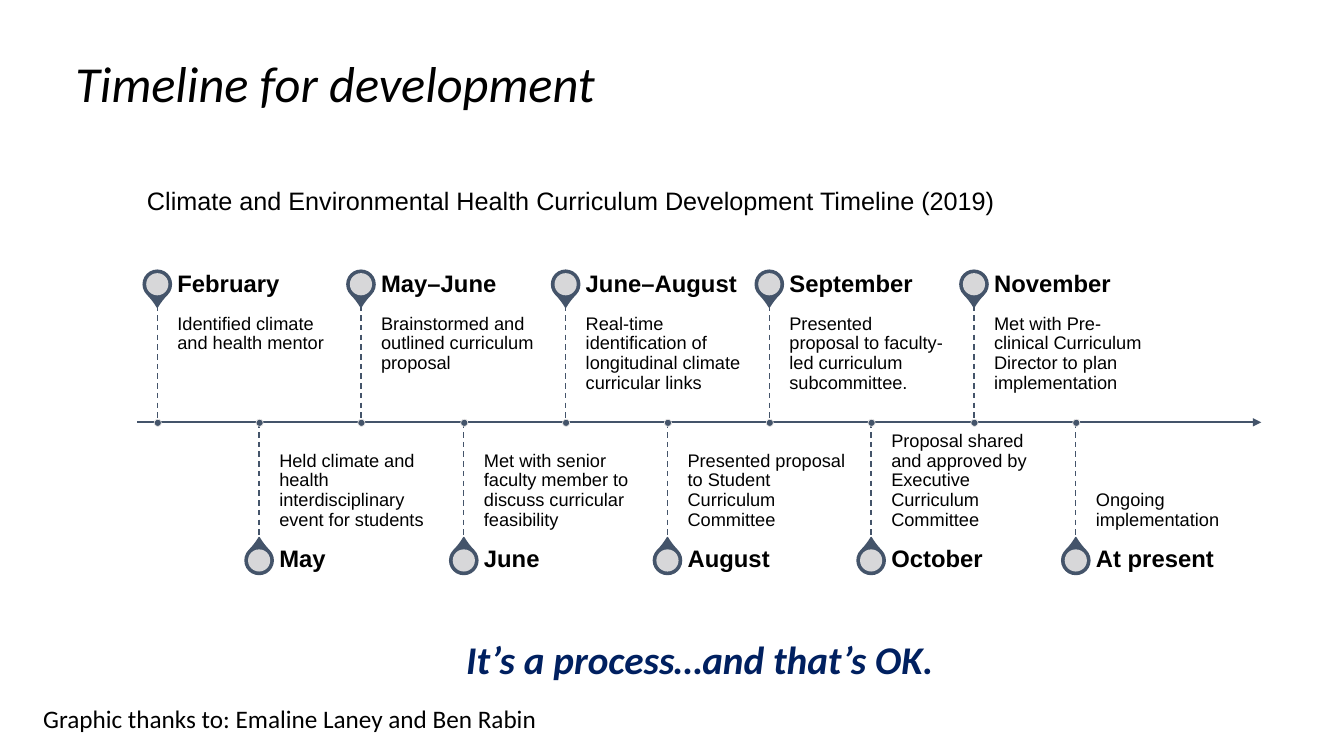
from dataclasses import dataclass

from lxml.etree import SubElement
from pptx import Presentation
from pptx.dml.color import RGBColor
from pptx.enum.dml import MSO_LINE
from pptx.enum.shapes import MSO_CONNECTOR, MSO_SHAPE
from pptx.enum.text import MSO_ANCHOR, MSO_AUTO_SIZE, PP_ALIGN
from pptx.oxml.ns import qn
from pptx.util import Emu, Pt

# 100 px to the inch
EMU_PER_PX = 9144


@dataclass(frozen=True)
class Theme:
    slate: str = "44546A"
    pale: str = "E7E6E6"
    ink: str = "000000"
    navy: str = "002060"
    heading_font: str = "Calibri"
    body_font: str = "Arial"
    title_size: int = 36
    closing_size: int = 28
    caption_size: int = 18
    month_size: int = 17
    detail_size: int = 13


THEME = Theme()

# Timeline layout
AXIS_LEFT, AXIS_RIGHT, AXIS_Y = 136, 1251, 419
FIRST_X, STEP_X = 156, 101.2
STEM = 116
PIN_OFFSET = 137
PIN_SIZE, PIN_HEAD_SIZE, DOT_SIZE = 28, 22, 7
LABEL_GAP, LABEL_WIDTH, MONTH_HEIGHT = 20, 164, 41

# Milestones alternate above and below the axis
MILESTONES = [
    ("February", "Identified climate and health mentor"),
    ("May", "Held climate and health interdisciplinary event for students"),
    ("May–June", "Brainstormed and outlined curriculum proposal"),
    ("June", "Met with senior faculty member to discuss curricular feasibility"),
    ("June–August", "Real-time identification of longitudinal climate curricular links"),
    ("August", "Presented proposal to Student Curriculum Committee"),
    ("September", "Presented proposal to faculty-led curriculum subcommittee."),
    ("October", "Proposal shared and approved by Executive Curriculum Committee"),
    ("November", "Met with Pre-clinical Curriculum Director to plan implementation"),
    ("At present", "Ongoing implementation"),
]


def px(length):
    return Emu(length * EMU_PER_PX)


def color(code):
    return RGBColor.from_string(code)


def add_text(slide, area, text, size, font, ink=THEME.ink, bold=False, italic=False,
             align=PP_ALIGN.LEFT, anchor=MSO_ANCHOR.TOP, insets=(10, 5, 10, 5),
             line_spacing=None, grow=False):
    box = slide.shapes.add_textbox(*map(px, area))
    frame = box.text_frame
    frame.word_wrap = True
    frame.auto_size = MSO_AUTO_SIZE.SHAPE_TO_FIT_TEXT if grow else MSO_AUTO_SIZE.NONE
    frame.vertical_anchor = anchor
    (frame.margin_left, frame.margin_top,
     frame.margin_right, frame.margin_bottom) = map(px, insets)
    para = frame.paragraphs[0]
    para.alignment = align
    para.line_spacing = line_spacing
    span = para.add_run()
    span.text = text
    span.font.size = Pt(size)
    span.font.name = font
    span.font.bold = bold
    span.font.italic = italic
    span.font.color.rgb = color(ink)


def add_line(slide, start, end, width, dash=None, arrow=False):
    line = slide.shapes.add_connector(MSO_CONNECTOR.STRAIGHT, *map(px, start + end))
    line.line.color.rgb = color(THEME.slate)
    line.line.width = Pt(width)
    if dash:
        line.line.dash_style = dash
    if arrow:
        SubElement(line.line._get_or_add_ln(), qn("a:tailEnd"), type="triangle")
    SubElement(line._element.spPr, qn("a:effectLst"))


def add_shape(slide, kind, area, fill, outline=None, width=1):
    shape = slide.shapes.add_shape(kind, *map(px, area))
    shape.shadow.inherit = False
    shape.fill.solid()
    shape.fill.fore_color.rgb = color(fill)
    if outline:
        shape.line.color.rgb = color(outline)
        shape.line.width = Pt(width)
    else:
        shape.line.fill.background()
    return shape


def centered(x, y, size):
    return x - size // 2, y - size // 2, size, size


def add_pin(slide, x, y, rotation):
    drop = add_shape(slide, MSO_SHAPE.TEAR, centered(x, y, PIN_SIZE),
                     THEME.slate, THEME.slate)
    drop.adjustments[0] = 1.15
    drop.rotation = rotation
    head = add_shape(slide, MSO_SHAPE.OVAL, centered(x, y, PIN_HEAD_SIZE), THEME.pale)
    fill_color = head._element.spPr.find(qn("a:solidFill"))[0]
    SubElement(fill_color, qn("a:alpha"), val="90000")


def add_milestone(slide, x, month, detail, above):
    direction = -1 if above else 1
    pin_y = AXIS_Y + direction * PIN_OFFSET
    stem_end = AXIS_Y + direction * STEM
    label_x = x + LABEL_GAP

    add_pin(slide, x, pin_y, 135 if above else 315)
    add_text(slide, (label_x, min(AXIS_Y, stem_end), LABEL_WIDTH, STEM), detail,
             THEME.detail_size, THEME.body_font, line_spacing=0.9,
             anchor=MSO_ANCHOR.TOP if above else MSO_ANCHOR.BOTTOM,
             insets=(0, 9, 9, 14) if above else (0, 14, 0, 9))
    month_y = stem_end - MONTH_HEIGHT if above else stem_end
    add_text(slide, (label_x, month_y, LABEL_WIDTH, MONTH_HEIGHT), month,
             THEME.month_size, THEME.body_font, bold=True, line_spacing=0.9,
             anchor=MSO_ANCHOR.MIDDLE, insets=(0, 0, 12, 0))
    add_line(slide, (x, min(AXIS_Y, stem_end)), (x, max(AXIS_Y, stem_end)), 1,
             dash=MSO_LINE.DASH)
    add_shape(slide, MSO_SHAPE.OVAL, centered(x, AXIS_Y, DOT_SIZE),
              THEME.slate, THEME.pale, 0.5)


def main():
    deck = Presentation()
    deck.slide_width, deck.slide_height = px(1333), px(750)
    slide = deck.slides.add_slide(deck.slide_layouts[6])

    # Axis and milestones
    add_line(slide, (AXIS_LEFT, AXIS_Y), (AXIS_RIGHT, AXIS_Y), 1.5, arrow=True)
    for index, (month, detail) in enumerate(MILESTONES):
        x = round(FIRST_X + index * STEP_X)
        add_milestone(slide, x, month, detail, above=index % 2 == 0)

    # Headings, credit and closing line
    add_text(slide, (136, 179, 926, 40),
             "Climate and Environmental Health Curriculum Development Timeline (2019)",
             THEME.caption_size, THEME.body_font, grow=True)
    add_text(slide, (65, 47, 1204, 71), "Timeline for development",
             THEME.title_size, THEME.heading_font, italic=True, grow=True)
    add_text(slide, (33, 693, 579, 40), "Graphic thanks to: Emaline Laney and Ben Rabin",
             THEME.caption_size, THEME.heading_font, grow=True)
    add_text(slide, (378, 625, 632, 57), "It’s a process…and that’s OK.",
             THEME.closing_size, THEME.heading_font, ink=THEME.navy,
             bold=True, italic=True, align=PP_ALIGN.CENTER, grow=True)

    deck.save("out.pptx")


if __name__ == "__main__":
    main()
